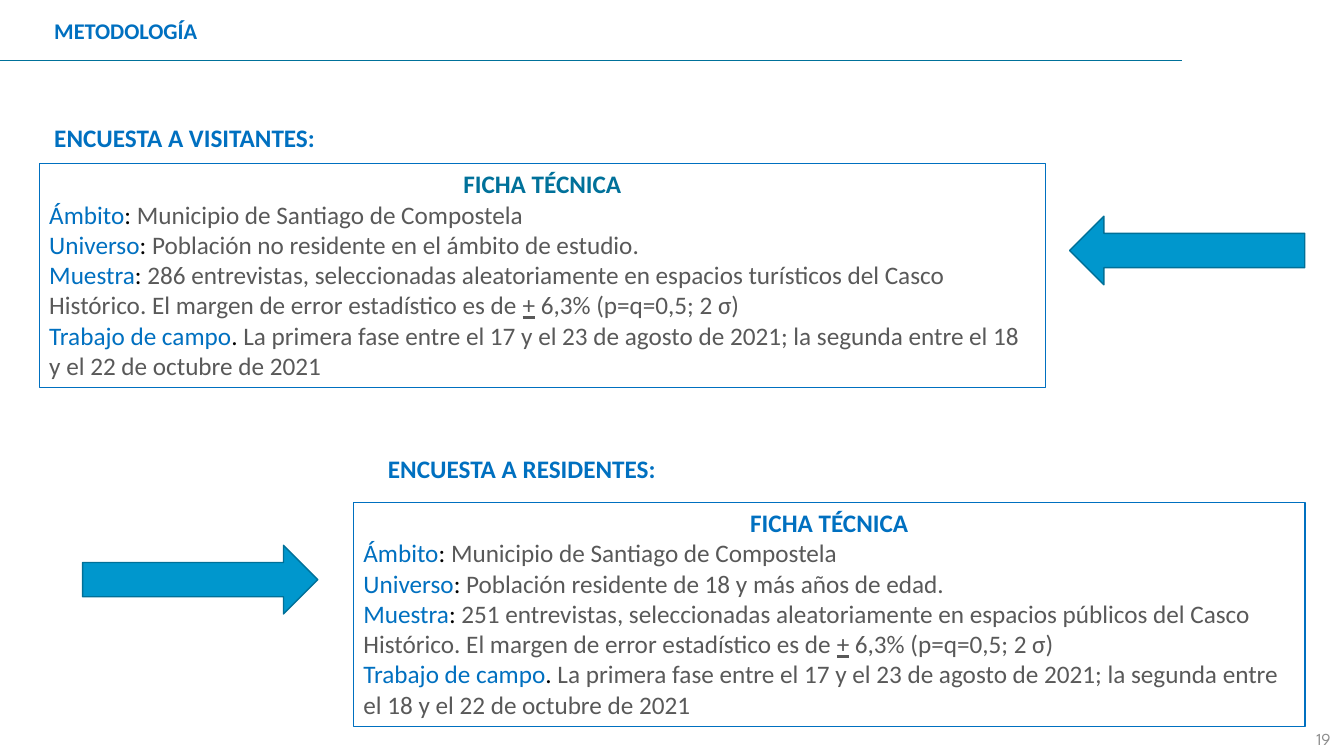
from lxml.etree import SubElement
from pptx import Presentation
from pptx.dml.color import RGBColor
from pptx.enum.shapes import MSO_CONNECTOR, MSO_SHAPE
from pptx.enum.text import MSO_ANCHOR, PP_ALIGN
from pptx.oxml.ns import qn
from pptx.util import Pt

BLUE = RGBColor(0x00, 0x70, 0xC0)
TEAL = RGBColor(0x00, 0x71, 0x9A)
ARROW_FILL = RGBColor(0x00, 0x97, 0xCD)
ARROW_LINE = RGBColor(0x00, 0x70, 0x98)
BLACK = RGBColor(0, 0, 0)
GRAY = RGBColor(0x59, 0x59, 0x59)
LIGHT_GRAY = RGBColor(0x8C, 0x8C, 0x8C)

FIELDWORK = ("La primera fase entre el 17 y el 23 de agosto de 2021; "
             "la segunda entre el 18 y el 22 de octubre de 2021")


def add_rule(s, x, y, width):
    line = s.shapes.add_connector(MSO_CONNECTOR.STRAIGHT, Pt(x), Pt(y), Pt(x + width), Pt(y))
    line.line.color.rgb = TEAL
    line.line.width = Pt(1)
    SubElement(line._element.spPr, qn("a:effectLst"))


def add_label(s, text, x, y, w, h, size, align=PP_ALIGN.LEFT):
    tf = s.shapes.add_textbox(Pt(x), Pt(y), Pt(w), Pt(h)).text_frame
    tf.word_wrap = True
    p = tf.paragraphs[0]
    p.text = text
    p.alignment = align
    p.font.size = Pt(size)
    p.font.name = "Calibri"
    p.font.bold = True
    p.font.color.rgb = BLUE
    p.line_spacing = 1.15
    p.space_after = Pt(10)


def add_page_number(s, number):
    tf = s.shapes.add_textbox(Pt(741.6), Pt(509.8), Pt(216), Pt(28.8)).text_frame
    tf.word_wrap = True
    tf.vertical_anchor = MSO_ANCHOR.BOTTOM
    p = tf.paragraphs[0]
    p.text = number
    p.alignment = PP_ALIGN.RIGHT
    p.font.size = Pt(12)
    p.font.name = "League Spartan"
    p.font.color.rgb = LIGHT_GRAY


def add_arrow(s, x, y, rotation=0):
    sp = s.shapes.add_shape(MSO_SHAPE.RIGHT_ARROW, Pt(x), Pt(y), Pt(168), Pt(49))
    sp.rotation = rotation
    sp.shadow.inherit = False
    sp.fill.solid()
    sp.fill.fore_color.rgb = ARROW_FILL
    sp.line.color.rgb = ARROW_LINE
    sp.line.width = Pt(1)


def add_run(p, text, color, underline=None):
    r = p.add_run()
    r.text = text
    r.font.color.rgb = color
    r.font.underline = underline


def add_paragraph(tf, align):
    p = tf.add_paragraph()
    p.alignment = align
    p.font.size = Pt(18)
    p.font.name = "Calibri"
    return p


def add_card(s, x, y, w, title_color, universe, sample):
    sp = s.shapes.add_shape(MSO_SHAPE.RECTANGLE, Pt(x), Pt(y), Pt(w), Pt(160))
    sp.shadow.inherit = False
    sp.fill.background()
    sp.line.color.rgb = BLUE
    sp.line.width = Pt(0.75)
    tf = sp.text_frame
    tf.word_wrap = True
    tf.vertical_anchor = MSO_ANCHOR.TOP
    p = tf.paragraphs[0]
    p.text = "FICHA TÉCNICA"
    p.alignment = PP_ALIGN.CENTER
    p.font.size = Pt(18)
    p.font.name = "Calibri"
    p.font.bold = True
    p.font.color.rgb = title_color
    rows = [
        ("Ámbito", ": ", "Municipio de Santiago de Compostela"),
        ("Universo", ": ", universe),
        ("Muestra", ": ", f"{sample} del Casco Histórico. El margen de error estadístico es de "),
        ("Trabajo de campo", ". ", FIELDWORK),
    ]
    for name, separator, value in rows:
        p = add_paragraph(tf, PP_ALIGN.LEFT)
        add_run(p, name, BLUE)
        add_run(p, separator, BLACK)
        add_run(p, value, GRAY)
        if name == "Muestra":
            add_run(p, "+", GRAY, underline=True)
            add_run(p, " 6,3% (p=q=0,5; 2 σ)", GRAY)


def main():
    prs = Presentation()
    prs.slide_width, prs.slide_height = Pt(960), Pt(540)
    s = prs.slides.add_slide(prs.slide_layouts[6])
    add_rule(s, 0, 43.2, 844.6)
    add_page_number(s, "19")
    add_label(s, "METODOLOGÍA", 31.7, 5.8, 537.8, 28.1, 16)
    add_label(s, "ENCUESTA A VISITANTES:", 31.7, 80.6, 662.4, 31, 18, PP_ALIGN.JUSTIFY)
    add_card(s, 28.1, 117, 718.6, TEAL,
             "Población no residente en el ámbito de estudio.",
             "286 entrevistas, seleccionadas aleatoriamente en espacios turísticos")
    add_arrow(s, 764, 154.4, rotation=180)
    add_label(s, "ENCUESTA A RESIDENTES:", 270, 316.8, 662.4, 31, 18, PP_ALIGN.JUSTIFY)
    add_card(s, 252.5, 359, 679.7, BLUE,
             "Población residente de 18 y más años de edad.",
             "251 entrevistas, seleccionadas aleatoriamente en espacios públicos")
    add_arrow(s, 59, 389.5)
    prs.save("out.pptx")


if __name__ == "__main__":
    main()
